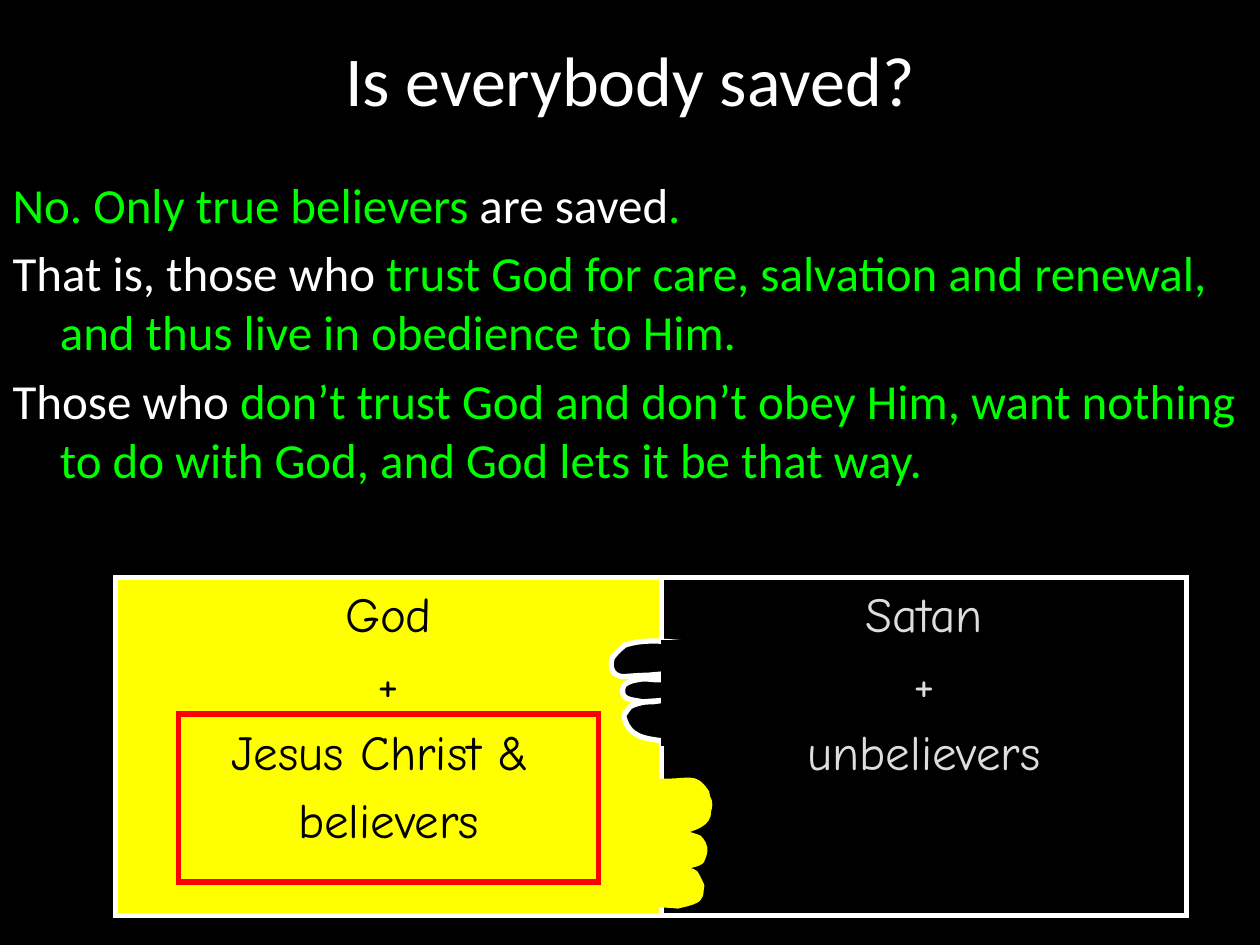
from pptx import Presentation
from pptx.dml.color import RGBColor
from pptx.enum.shapes import MSO_SHAPE
from pptx.enum.text import MSO_ANCHOR, MSO_AUTO_SIZE, PP_ALIGN
from pptx.oxml.ns import qn
from pptx.util import Pt
from lxml.etree import SubElement

THEME = {
    "black": "000000", "white": "FFFFFF", "green": "00FF00",
    "yellow": "FFFF00", "grey": "DDDDDD", "red": "FF0000",
    "text_font": "Calibri", "panel_font": "Comic Neue",
    "title_size": 40, "text_size": 28, "line": 3,
    "space_before": 5.6, "indent": 27,
}

# Content
TITLE = "Is everybody saved?"
ANSWERS = [
    [("No. Only true believers ", "green"), ("are saved", "white"), (".", "green")],
    [("That is, those who ", "white"),
     ("trust God for care, salvation and renewal, and thus live in obedience to Him.", "green")],
    [("Those who ", "white"),
     ("don’t trust God and don’t obey Him, want nothing to do with God, "
      "and God lets it be that way.", "green")],
]
PANELS = [
    (312, "yellow", "black", ["God", "+", "Jesus Christ & ", "believers"]),
    (300, "black", "grey", ["Satan", "+", "unbelievers"]),
]
PANEL_LEFT, PANEL_TOP, PANEL_HEIGHT = 66, 330, 193

# Hand outlines: a start point, then two handles and an end point per curve
HAND_UNIT = Pt(0.72)
DARK_HAND = [
    (540, 510),
    (526, 509), (511, 507), (496, 512), (492, 515), (489, 518), (486, 522),
    (484, 529), (485, 535), (493, 537), (499, 537), (505, 536), (512, 536),
    (518, 536), (534, 533), (530, 537), (525, 542), (516, 538), (509, 539),
    (503, 540), (500, 540), (495, 544), (491, 556), (501, 555), (510, 557),
    (555, 554), (531, 555), (518, 557), (515, 557), (511, 557), (508, 558),
    (507, 558), (501, 560), (500, 561), (498, 563), (495, 568), (495, 568),
    (499, 585), (511, 586), (526, 588), (535, 586), (538, 587), (543, 580),
    (544, 574), (545, 568), (547, 562), (546, 551), (546, 540), (545, 530),
    (545, 522), (540, 518), (540, 510),
]
LIGHT_HAND = [
    (495, 625),
    (514, 620), (505, 622), (522, 620), (548, 621), (551, 614), (561, 629),
    (561, 631), (562, 634), (563, 636), (564, 640), (562, 643), (562, 647),
    (560, 656), (546, 658), (539, 661), (526, 660), (514, 661), (501, 660),
    (499, 659), (506, 658), (508, 658), (516, 658), (525, 659), (534, 660),
    (541, 661), (548, 662), (555, 665), (560, 671), (561, 674), (557, 683),
    (555, 686), (546, 687), (543, 688), (532, 688), (522, 687), (512, 687),
    (509, 687), (517, 688), (519, 688), (527, 689), (532, 690), (540, 690),
    (544, 691), (549, 690), (552, 693), (554, 696), (557, 703), (557, 703),
    (556, 706), (557, 710), (555, 712), (554, 716), (541, 718), (538, 719),
    (528, 718), (519, 718), (510, 717), (506, 717), (501, 716), (496, 715),
    (494, 714), (490, 714), (490, 714), (487, 700), (488, 708), (490, 685),
    (491, 672), (492, 653), (500, 641), (499, 634), (500, 630), (495, 625),
]


def color(name):
    return RGBColor.from_string(THEME[name])


def place(shape, left, top, width, height):
    shape.left, shape.top = Pt(left), Pt(top)
    shape.width, shape.height = Pt(width), Pt(height)


def paint(shape, fill, line, width=THEME["line"]):
    shape.shadow.inherit = False
    if fill:
        shape.fill.solid()
        shape.fill.fore_color.rgb = color(fill)
    else:
        shape.fill.background()
    shape.line.color.rgb = color(line)
    shape.line.width = Pt(width)


def add_box(slide, bounds, fill, line, width=THEME["line"]):
    box = slide.shapes.add_shape(MSO_SHAPE.RECTANGLE, *map(Pt, bounds))
    paint(box, fill, line, width)
    # Sharp corners
    SubElement(box._element.spPr.find(qn("a:ln")), qn("a:miter"), lim="800000")
    return box


def write(frame, paragraphs, font, size, align, hanging=True):
    """Fill a frame with paragraphs, each a list of (text, color name)."""
    frame.word_wrap = True
    frame.auto_size = MSO_AUTO_SIZE.NONE
    for number, spans in enumerate(paragraphs):
        para = frame.add_paragraph() if number else frame.paragraphs[0]
        para.alignment = align
        if hanging:
            para.space_before = Pt(THEME["space_before"])
            properties = para._p.get_or_add_pPr()
            properties.set("marL", str(Pt(THEME["indent"])))
            properties.set("indent", str(-Pt(THEME["indent"])))
            SubElement(properties, qn("a:buNone"))
        for text, shade in spans:
            span = para.add_run()
            span.text = text
            span.font.name = font
            span.font.size = Pt(size)
            span.font.color.rgb = color(shade)


def add_hand(slide, points, fill, line):
    """Build a freeform, then join every three points into one curve."""
    first, *rest = points
    builder = slide.shapes.build_freeform(*first, scale=HAND_UNIT)
    builder.add_line_segments(rest, close=True)
    hand = builder.convert_to_shape()
    segments = list(hand._element.iter(qn("a:lnTo")))
    for handle, second_handle, end in zip(*[iter(segments)] * 3):
        handle.tag = qn("a:cubicBezTo")
        for segment in (second_handle, end):
            handle.append(segment[0])
            segment.getparent().remove(segment)
    paint(hand, fill, line)


def main():
    deck = Presentation()
    deck.slide_width, deck.slide_height = Pt(720), Pt(540)
    slide = deck.slides.add_slide(deck.slide_layouts[1])
    slide.background.fill.solid()
    slide.background.fill.fore_color.rgb = color("black")

    # Title and answers
    title, body = slide.shapes.title, slide.placeholders[1]
    place(title, 0, 0, 720, 90)
    title.text_frame.vertical_anchor = MSO_ANCHOR.MIDDLE
    write(title.text_frame, [[(TITLE, "white")]], THEME["text_font"],
          THEME["title_size"], PP_ALIGN.CENTER, hanging=False)
    place(body, 0, 96, 720, 180)
    write(body.text_frame, ANSWERS, THEME["text_font"], THEME["text_size"], PP_ALIGN.LEFT)

    # Two sides
    left = PANEL_LEFT
    for width, fill, ink, lines in PANELS:
        panel = add_box(slide, (left, PANEL_TOP, width, PANEL_HEIGHT), fill, "white")
        panel.text_frame.vertical_anchor = MSO_ANCHOR.TOP
        write(panel.text_frame, [[(line, ink)] for line in lines],
              THEME["panel_font"], THEME["text_size"], PP_ALIGN.CENTER)
        left += width

    # Frame around the believers
    add_box(slide, (102, 408, 240, 96), None, "red")

    # Hands reaching across, and the cover over the dark palm
    add_hand(slide, DARK_HAND, "black", "white")
    add_hand(slide, LIGHT_HAND, "yellow", "yellow")
    add_box(slide, (378, 366, 30, 60), "black", "black", 0.75)

    deck.save("out.pptx")


if __name__ == "__main__":
    main()
